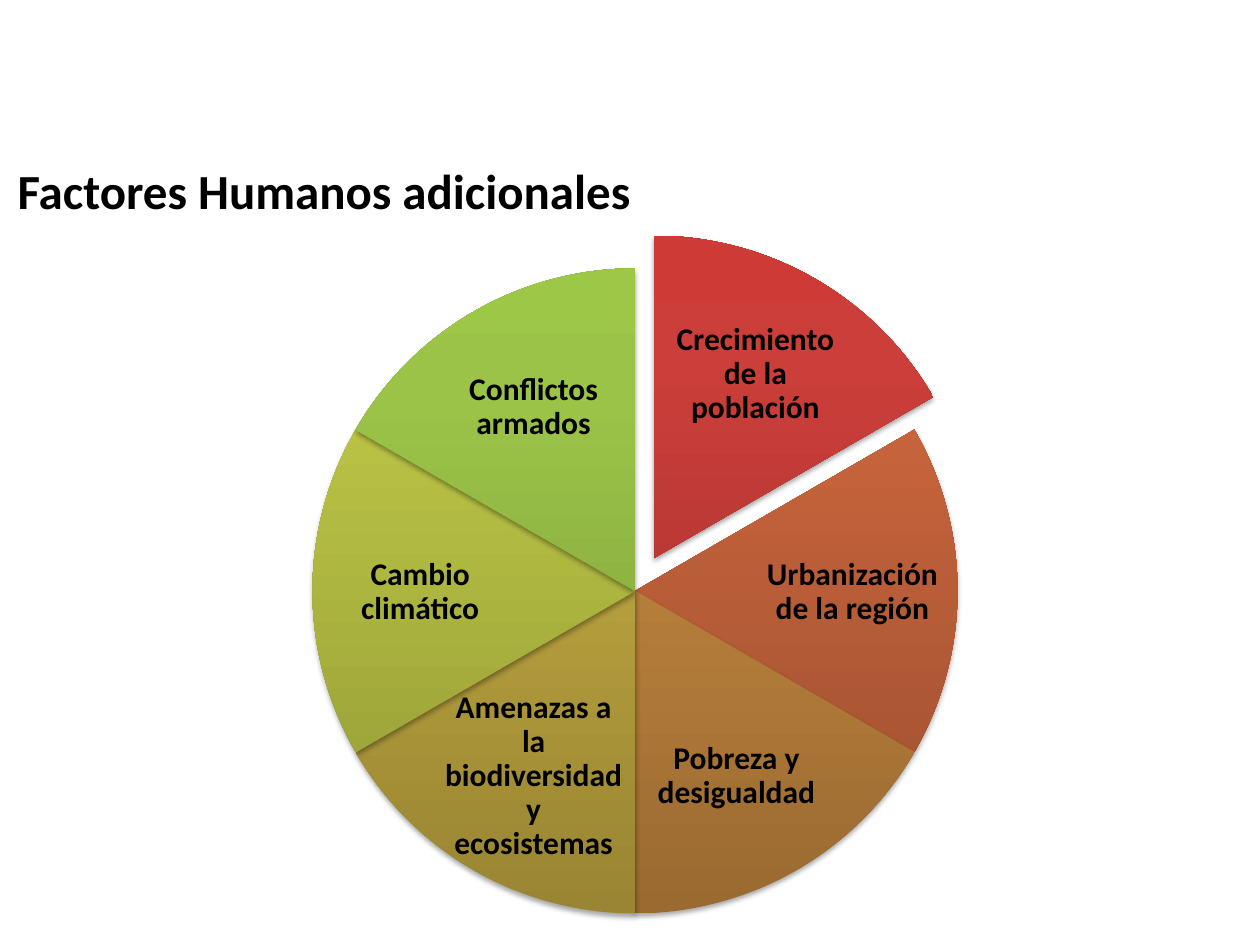
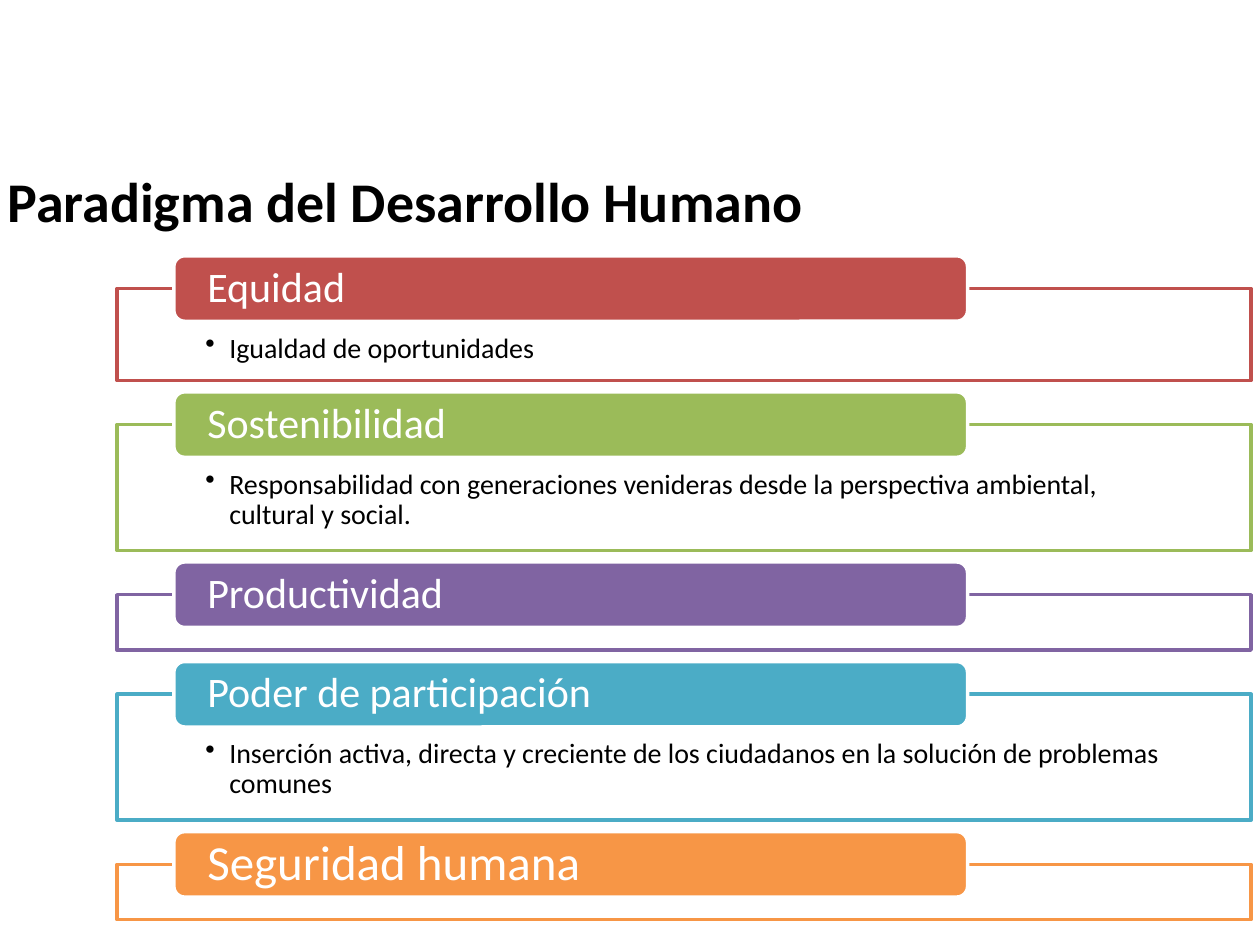
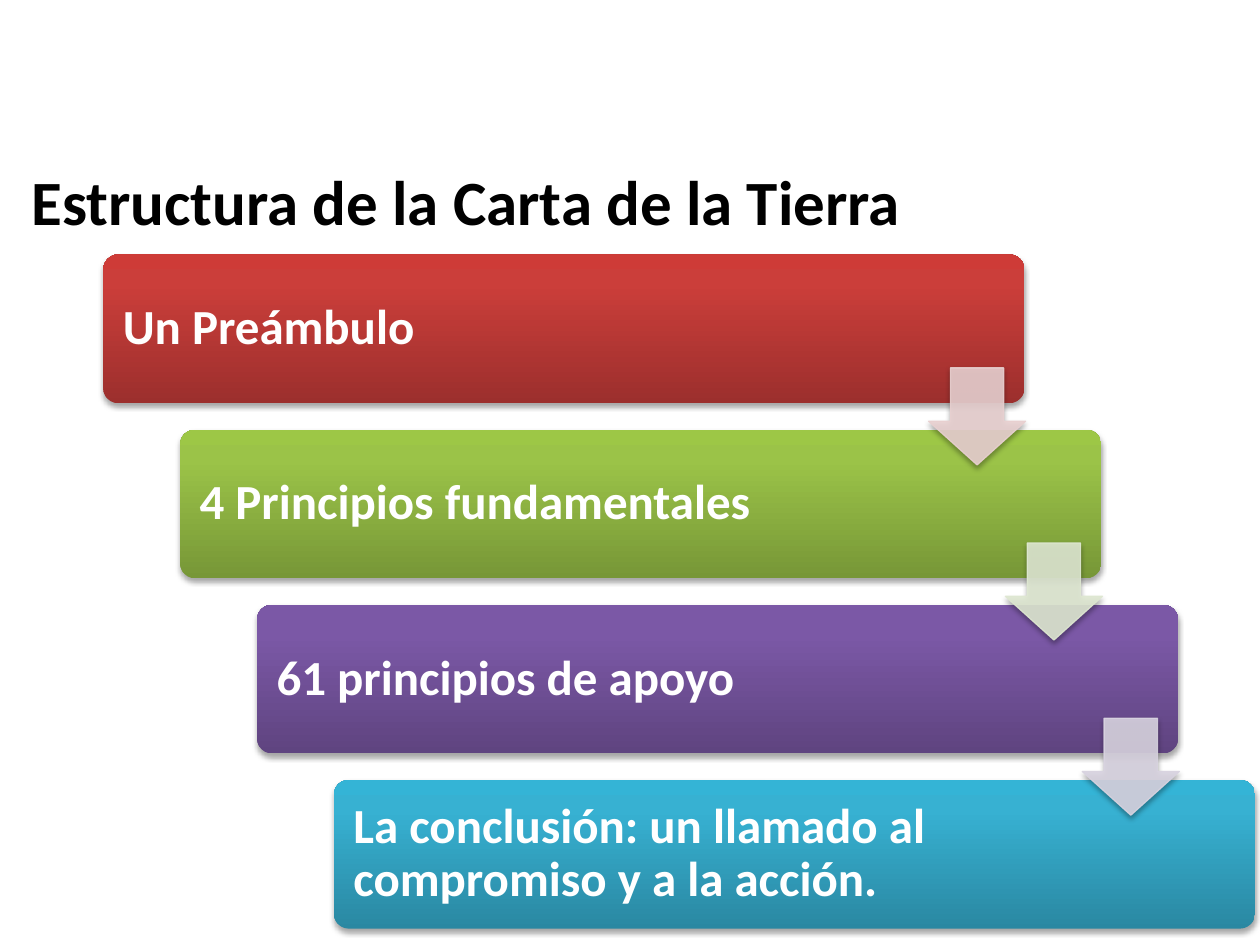
from lxml.etree import SubElement
from pptx import Presentation
from pptx.dml.color import RGBColor
from pptx.enum.shapes import MSO_SHAPE as Preset
from pptx.enum.text import MSO_ANCHOR as Anchor, MSO_AUTO_SIZE as AutoSize, PP_ALIGN as Align
from pptx.oxml.ns import qn
from pptx.util import Inches, Pt

FONT = "Calibri"
COLORS = {
    "black": "000000", "white": "FFFFFF",
    "red": "C0504D", "green": "9BBB59", "purple": "8064A2",
    "teal": "4BACC6", "orange": "F79646",
    "pale_red": "E8D0D0", "pale_green": "DEE7D1", "pale_purple": "D8D3E0",
}
GRADIENTS = {
    "red": ("9C2F2D", "CB3E3A", "CE3B37"),
    "rust": ("9B4E2F", "C9653D", "CD643A"),
    "brown": ("9A6A31", "C88A40", "CB8B3D"),
    "mustard": ("998533", "C6AD42", "CAAF40"),
    "olive": ("919835", "BCC545", "BFC843"),
    "green": ("779737", "9BC348", "9DC746"),
    "purple": ("5F4480", "7B58A6", "7C57A8"),
    "teal": ("2A88A2", "37B1D2", "34B4D6"),
}
GRADIENT_STOPS = (0, 80, 100)

DISC_SIZE = 5.12
WEDGE_SWEEP = 36
FULL_TURN = 216
FIRST_ANGLE = 162
WEDGES = [
    ("Crecimiento de la población", "red", (0.15, -0.26), (2.62, 0.55, 1.49, 1.1)),
    ("Urbanización de la región", "rust", (0, 0), (3.51, 2.05, 1.55, 1.04)),
    ("Pobreza y desigualdad", "brown", (0, 0), (2.62, 3.48, 1.49, 1.1)),
    ("Amenazas a la biodiversidad y ecosistemas", "mustard", (0, 0), (1.01, 3.48, 1.49, 1.1)),
    ("Cambio climático", "olive", (0, 0), (0.08, 2.05, 1.55, 1.04)),
    ("Conflictos armados", "green", (0, 0), (1.01, 0.55, 1.49, 1.1)),
]
PILLAR_GAP = 0.35
PILLARS = [
    ("Equidad", 24, "red", 0.73, "Igualdad de oportunidades"),
    ("Sostenibilidad", 24, "green", 1.0,
     "Responsabilidad con generaciones venideras desde la perspectiva ambiental, cultural y social."),
    ("Productividad", 24, "purple", 0.44, ""),
    ("Poder de participación", 24, "teal", 1.0,
     "Inserción activa, directa y creciente de los ciudadanos en la solución de problemas comunes"),
    ("Seguridad humana", 28, "orange", 0.44, ""),
]
STEP_X, STEP_Y = 0.61, 1.39
STEPS = [
    ("Un Preámbulo", "red"),
    ("4 Principios fundamentales", "green"),
    ("61 principios de apoyo", "purple"),
    ("La conclusión: un llamado al compromiso y a la acción.", "teal"),
]
ARROWS = ["pale_red", "pale_green", "pale_purple"]


def rgb(name):
    return RGBColor.from_string(COLORS[name])


def write(shape, text, *, size, color="black", bold=False, align=Align.LEFT,
          anchor=Anchor.MIDDLE, insets=(0.1, 0.05, 0.1, 0.05), spacing=None, bullet=False):
    frame = shape.text_frame
    frame.word_wrap = True
    frame.auto_size = AutoSize.NONE
    frame.vertical_anchor = anchor
    (frame.margin_left, frame.margin_top,
     frame.margin_right, frame.margin_bottom) = map(Inches, insets)
    para = frame.paragraphs[0]
    para.alignment = align
    if spacing:
        para.line_spacing = spacing
    if bullet:
        para.level = 1
        properties = para._p.get_or_add_pPr()
        properties.set("marL", str(Inches(0.19)))
        properties.set("indent", str(Inches(-0.19)))
        SubElement(properties, qn("a:buChar"), char="•")
    span = para.add_run()
    span.text = text
    span.font.name = FONT
    span.font.size = Pt(size)
    span.font.bold = bold
    span.font.color.rgb = rgb(color)


def add_preset(parent, preset, box, fill=None, line=None, width=2):
    shape = parent.shapes.add_shape(preset, *map(Inches, box))
    shape.shadow.inherit = False
    if fill:
        shape.fill.solid()
        shape.fill.fore_color.rgb = rgb(fill)
    if line:
        shape.line.color.rgb = rgb(line)
        shape.line.width = Pt(width)
    else:
        shape.line.fill.background()
    return shape


def set_opacity(properties, percent):
    for color in properties.iter(qn("a:srgbClr")):
        SubElement(color, qn("a:alpha"), val=str(percent * 1000))


def add_shadow(shape):
    effects = shape._element.spPr.find(qn("a:effectLst"))
    shadow = SubElement(effects, qn("a:outerShdw"), blurRad=str(Pt(3.1)), dist=str(Pt(1.8)),
                        dir="5400000", rotWithShape="0")
    color = SubElement(shadow, qn("a:srgbClr"), val=COLORS["black"])
    SubElement(color, qn("a:alpha"), val="35000")


def shade(shape, name):
    shape.fill.gradient()
    shape.fill.gradient_angle = 90
    stops = shape._element.spPr.find(qn("a:gradFill")).find(qn("a:gsLst"))
    for stop in list(stops):
        stops.remove(stop)
    for position, color in zip(GRADIENT_STOPS, GRADIENTS[name]):
        stop = SubElement(stops, qn("a:gs"), pos=str(position * 1000))
        SubElement(stop, qn("a:srgbClr"), val=color)
    add_shadow(shape)


def add_page(deck, title, box, size, align=Align.LEFT):
    page = deck.slides.add_slide(deck.slide_layouts[5])
    heading = page.shapes.title
    heading.left, heading.top, heading.width, heading.height = map(Inches, box)
    write(heading, title, size=size, bold=True, align=align)
    return page


def draw_factor_disc(page, left, top):
    group = page.shapes.add_group_shape()
    for index, (text, gradient, (shift_x, shift_y), label_box) in enumerate(WEDGES):
        x, y = left + shift_x, top + shift_y
        wedge = add_preset(group, Preset.PIE, (x, y, DISC_SIZE, DISC_SIZE))
        start = FIRST_ANGLE + WEDGE_SWEEP * index
        wedge.adjustments[0] = start % FULL_TURN
        wedge.adjustments[1] = (start + WEDGE_SWEEP) % FULL_TURN
        shade(wedge, gradient)
        label_x, label_y, width, height = label_box
        label = group.shapes.add_textbox(
            *map(Inches, (x + label_x, y + label_y, width, height)))
        write(label, text, size=18, bold=True, align=Align.CENTER,
              insets=(0.03,) * 4, spacing=0.9)


def draw_pillars(page, left, top, width):
    group = page.shapes.add_group_shape()
    for name, size, color, height, detail in PILLARS:
        panel = add_preset(group, Preset.RECTANGLE, (left, top, width, height), "white")
        set_opacity(panel._element.spPr, 90)
        panel.line.color.rgb = rgb(color)
        panel.line.width = Pt(2)
        if detail:
            write(panel, detail, size=16, anchor=Anchor.TOP,
                  insets=(0.7, 0.36, 0.7, 0.12), spacing=0.9, bullet=True)
        bar = add_preset(group, Preset.ROUNDED_RECTANGLE,
                         (left + 0.45, top - 0.26, width * 0.7, 0.52), color, "white")
        write(bar, name, size=size, color="white", insets=(0.24, 0, 0.24, 0), spacing=0.9)
        top += height + PILLAR_GAP


def draw_staircase(page, left, top, width, height):
    group = page.shapes.add_group_shape()
    for index, (text, gradient) in enumerate(STEPS):
        step = add_preset(group, Preset.ROUNDED_RECTANGLE,
                          (left + STEP_X * index, top + STEP_Y * index, width, height))
        step.adjustments[0] = 0.1
        shade(step, gradient)
        write(step, text, size=28, color="white", bold=True,
              insets=(0.12, 0.12, 1.5, 0.12), spacing=0.9)
    for index, color in enumerate(ARROWS):
        arrow = add_preset(group, Preset.DOWN_ARROW,
                           (left + width - 0.76 + STEP_X * index,
                            top + 0.9 + STEP_Y * index, 0.77, 0.77), color, color, 0.75)
        arrow.adjustments[0] = 0.55
        arrow.adjustments[1] = 0.45
        set_opacity(arrow._element.spPr, 90)
        add_shadow(arrow)


def main():
    deck = Presentation()
    deck.slide_width, deck.slide_height = Inches(10), Inches(7.5)

    page = add_page(deck, "Factores Humanos adicionales", (0.04, 1.07, 8.78, 0.87), 28)
    draw_factor_disc(page, 2.48, 2.13)

    page = add_page(deck, "Paradigma del Desarrollo Humano", (-0.04, 1.15, 9, 0.87), 32)
    draw_pillars(page, 0.93, 2.29, 9)

    page = add_page(deck, "Estructura de la Carta de la Tierra",
                    (-0.04, 1.31, 7.48, 0.56), 36, Align.CENTER)
    draw_staircase(page, 0.82, 2.02, 7.31, 1.18)

    deck.save("out.pptx")


if __name__ == "__main__":
    main()
